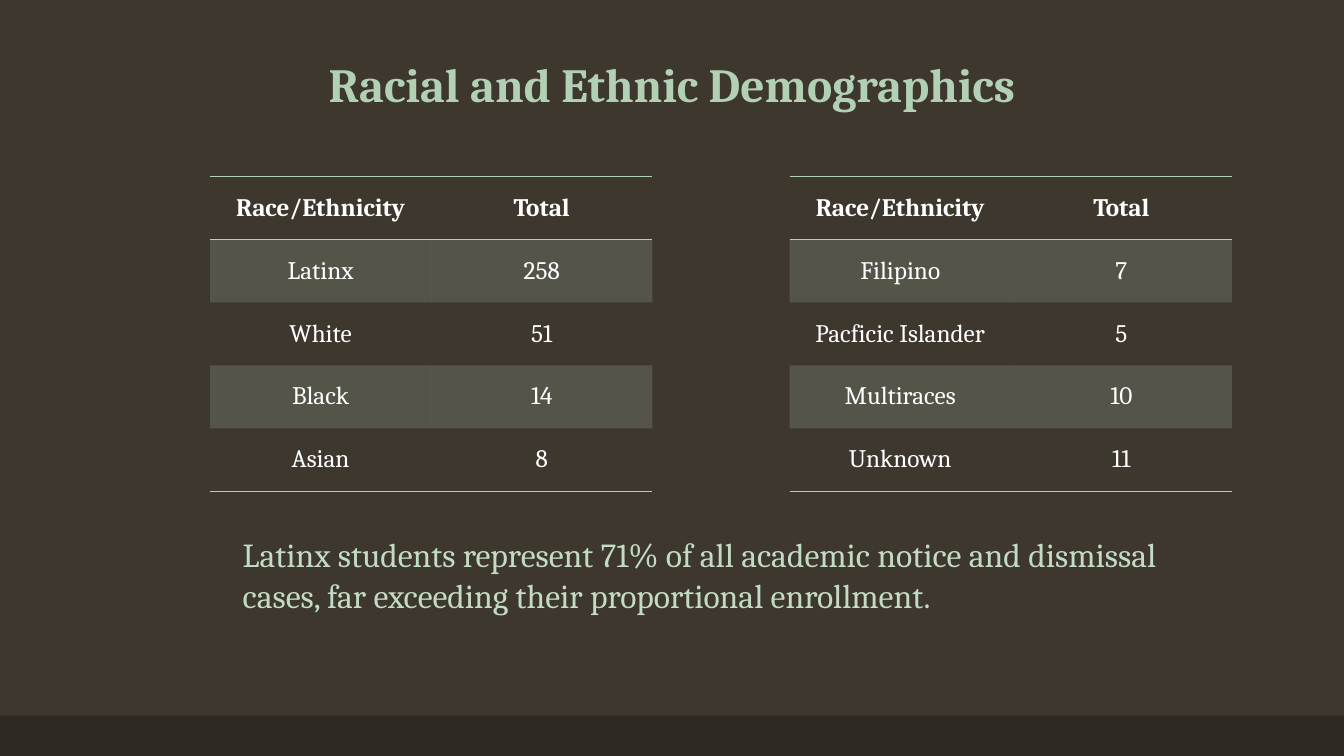
from lxml import etree
from pptx import Presentation
from pptx import util as u
from pptx.dml.color import RGBColor
from pptx.enum import shapes, text
from pptx.oxml.ns import qn

COLORS = {
    "background": "3D372E",
    "footer": "2E2923",
    "accent": "B2D0B4",
    "note": "C3DBC5",
    "white": "FFFFFF",
}
FONT = "Cambria"
HEADER = ("Race/Ethnicity", "Total")
LEFT_ROWS = [HEADER, ("Latinx", "258"), ("White", "51"), ("Black", "14"), ("Asian", "8")]
RIGHT_ROWS = [
    HEADER,
    ("Filipino", "7"),
    ("Pacficic Islander", "5"),
    ("Multiraces", "10"),
    ("Unknown", "11"),
]


class SlideBuilder:
    def __init__(self, deck):
        self.page = deck.slides.add_slide(deck.slide_layouts[5])
        fill = self.page.background.fill
        fill.solid()
        fill.fore_color.rgb = self.color("background")

    def color(self, name):
        return RGBColor.from_string(COLORS[name])

    def style(self, para, size, color, bold=False, align=None):
        para.font.name = FONT
        para.font.size = u.Pt(size)
        para.font.bold = bold
        para.font.color.rgb = self.color(color)
        para.alignment = align

    def bar(self, left, top, width, height):
        bar = self.page.shapes.add_shape(
            shapes.MSO_SHAPE.RECTANGLE, u.Pt(left), u.Pt(top), u.Pt(width), u.Pt(height)
        )
        bar.shadow.inherit = False
        bar.fill.solid()
        bar.fill.fore_color.rgb = self.color("footer")
        bar.line.fill.background()

    def title(self, words, left, top, width, height):
        box = self.page.shapes.title
        box.left, box.top = u.Pt(left), u.Pt(top)
        box.width, box.height = u.Pt(width), u.Pt(height)
        frame = box.text_frame
        frame.text = words
        frame.word_wrap = True
        frame.auto_size = text.MSO_AUTO_SIZE.NONE
        frame.vertical_anchor = text.MSO_ANCHOR.BOTTOM
        para = frame.paragraphs[0]
        para.line_spacing = 0.9
        self.style(para, 34, "accent", True, text.PP_ALIGN.CENTER)

    def border(self, cell, side, visible):
        properties = cell._tc.get_or_add_tcPr()
        line = etree.SubElement(properties, qn(f"a:ln{side}"), w=str(u.Pt(1)))
        if visible:
            solid = etree.SubElement(line, qn("a:solidFill"))
            etree.SubElement(solid, qn("a:srgbClr"), val=COLORS["accent"])
        else:
            etree.SubElement(line, qn("a:noFill"))

    def shade(self, cell, visible):
        if not visible:
            cell.fill.background()
            return
        cell.fill.solid()
        cell.fill.fore_color.rgb = self.color("accent")
        tint = cell._tc.tcPr.find(f"{qn('a:solidFill')}/{qn('a:srgbClr')}")
        etree.SubElement(tint, qn("a:alpha"), val="20000")

    def table(self, rows, left, top, column_width, row_height):
        columns = len(rows[0])
        table = self.page.shapes.add_table(
            len(rows), columns, u.Pt(left), u.Pt(top),
            u.Pt(column_width * columns), u.Pt(row_height * len(rows)),
        ).table
        table.first_row = table.horz_banding = False
        ruled_edges = (0, 1, len(rows))
        for index, values in enumerate(rows):
            for column, value in enumerate(values):
                cell = table.cell(index, column)
                cell.text = value
                cell.vertical_anchor = text.MSO_ANCHOR.MIDDLE
                self.style(
                    cell.text_frame.paragraphs[0], 18, "white", index == 0, text.PP_ALIGN.CENTER
                )
                for side in "LR":
                    self.border(cell, side, False)
                self.border(cell, "T", index in ruled_edges)
                self.border(cell, "B", index + 1 in ruled_edges)
                self.shade(cell, index % 2 == 1)

    def note(self, words, left, top, width, height):
        box = self.page.shapes.add_textbox(u.Pt(left), u.Pt(top), u.Pt(width), u.Pt(height))
        frame = box.text_frame
        frame.word_wrap = True
        frame.auto_size = text.MSO_AUTO_SIZE.SHAPE_TO_FIT_TEXT
        frame.text = words
        self.style(frame.paragraphs[0], 24, "note")


def main():
    deck = Presentation()
    deck.slide_width, deck.slide_height = u.Pt(960), u.Pt(540)
    builder = SlideBuilder(deck)
    builder.bar(0, 511, 960, 29)
    builder.title("Racial and Ethnic Demographics", 66, 30, 828, 54)
    for rows, left in ((LEFT_ROWS, 150), (RIGHT_ROWS, 564)):
        builder.table(rows, left, 126, 158, 45)
    builder.note(
        "Latinx students represent 71% of all academic notice and dismissal cases, "
        "far exceeding their proportional enrollment.",
        166.3, 378, 714, 65.5,
    )
    deck.save("out.pptx")


if __name__ == "__main__":
    main()
